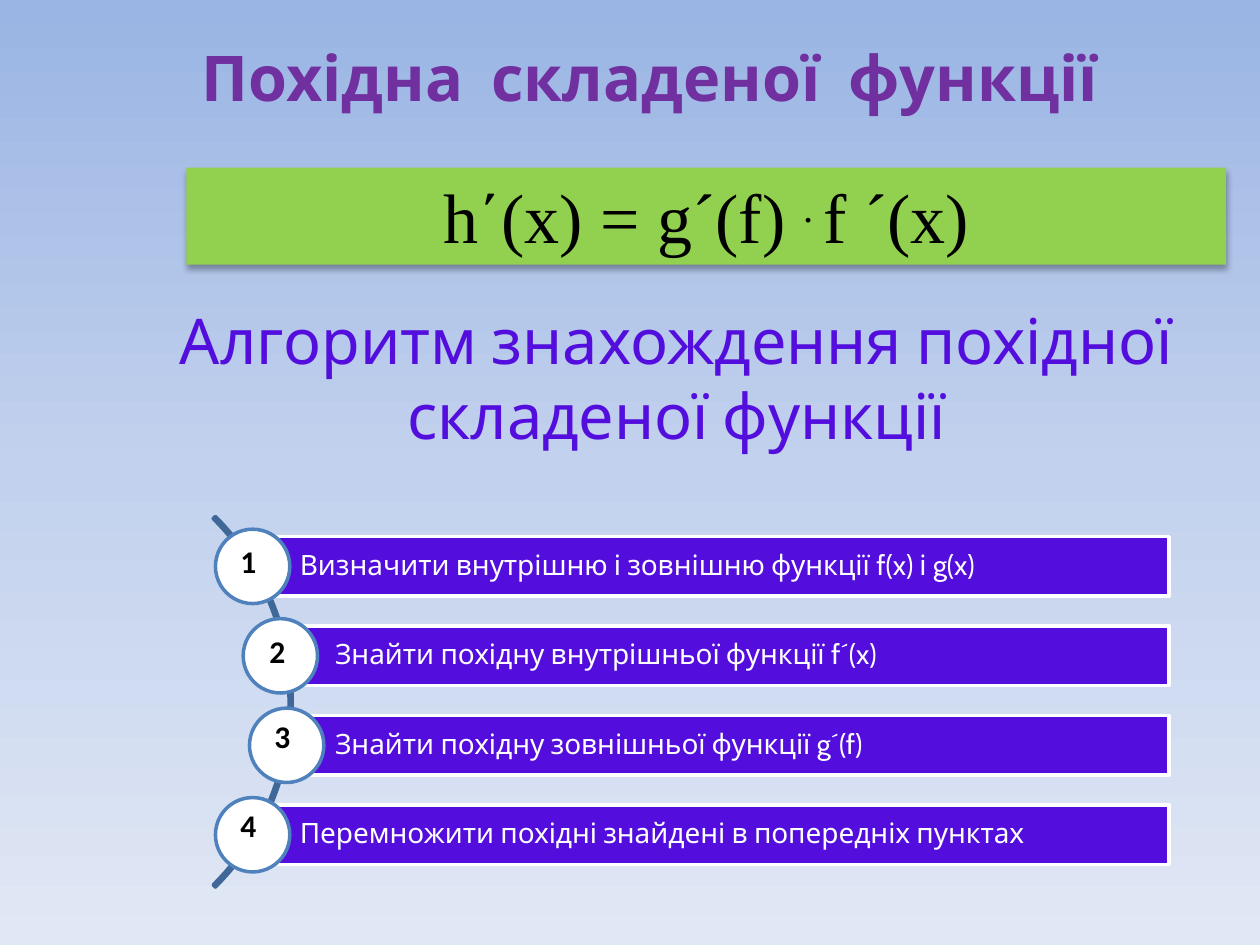
from copy import deepcopy
from lxml.etree import SubElement
from pptx import Presentation
from pptx.dml.color import RGBColor
from pptx.enum.shapes import MSO_SHAPE
from pptx.enum.text import MSO_ANCHOR, MSO_AUTO_SIZE, PP_ALIGN
from pptx.oxml.ns import qn
from pptx.util import Inches, Pt


def color(code):
    return RGBColor.from_string(code)


class Board:
    font = "Cabin"
    violet = "530EDE"
    white = "FFFFFF"
    black = "000000"

    def __init__(self, slide):
        self.slide = slide

    def backdrop(self, codes):
        fill = self.slide.background.fill
        fill.gradient()
        fill.gradient_angle = 270
        stops = self.slide.element.find(".//" + qn("a:gsLst"))
        stops.insert(1, deepcopy(stops[0]))
        for i, (stop, code) in enumerate(zip(fill.gradient_stops, codes)):
            stop.color.rgb = color(code)
            stop.position = i / (len(codes) - 1)

    def style(self, par, size, code, font=font, bold=False):
        par.font.size = Pt(size)
        par.font.name = font
        par.font.bold = bold
        par.font.color.rgb = color(code)

    def shape(self, kind, box, fill=None, line=None):
        item = self.slide.shapes.add_shape(kind, *map(Inches, box))
        item.shadow.inherit = False
        if fill:
            item.fill.solid()
            item.fill.fore_color.rgb = color(fill)
        else:
            item.fill.background()
        if line:
            item.line.color.rgb = color(line)
            item.line.width = Pt(2)
        else:
            item.line.fill.background()
        return item

    def text(self, box, words, size, code, bold=False):
        frame = self.slide.shapes.add_textbox(*map(Inches, box)).text_frame
        frame.word_wrap = True
        frame.auto_size = MSO_AUTO_SIZE.SHAPE_TO_FIT_TEXT
        par = frame.paragraphs[0]
        par.text = words
        par.alignment = PP_ALIGN.CENTER
        self.style(par, size, code, bold=bold)

    def formula(self, box, parts):
        item = self.shape(MSO_SHAPE.RECTANGLE, box, "92D050")
        glow = SubElement(
            item.element.spPr.find(qn("a:effectLst")), qn("a:outerShdw"),
            blurRad=str(Pt(3.5)), dist=str(Pt(2.2)), dir="5400000", rotWithShape="0")
        tint = SubElement(glow, qn("a:srgbClr"), val=self.black)
        SubElement(tint, qn("a:alpha"), val="32000")
        frame = item.text_frame
        frame.vertical_anchor = MSO_ANCHOR.TOP
        par = frame.paragraphs[0]
        par.alignment = PP_ALIGN.CENTER
        for words, base in parts:
            run = par.add_run()
            run.text = words
            if base:
                run.font._element.set("baseline", str(base * 1000))
        self.style(par, 40, self.black, "Times New Roman")

    def arc(self, box):
        item = self.shape(MSO_SHAPE.BLOCK_ARC, box, line="3F6797")
        for i, value in enumerate((189, 27, 0.006)):
            item.adjustments[i] = value

    def bar(self, left, top, words):
        box = (left, top, 9.28 - left, 0.47)
        frame = self.shape(MSO_SHAPE.RECTANGLE, box, self.violet, self.white).text_frame
        frame.word_wrap = True
        frame.vertical_anchor = MSO_ANCHOR.MIDDLE
        frame.margin_left = Inches(0.38)
        frame.margin_right = frame.margin_top = frame.margin_bottom = Inches(0.04)
        par = frame.paragraphs[0]
        par.text = words
        par.alignment = PP_ALIGN.LEFT
        par.line_spacing = 0.9
        self.style(par, 16, self.white)

    def disc(self, left, top):
        self.shape(MSO_SHAPE.OVAL, (left, top, 0.59, 0.59), self.white, "4F81BD")

    def label(self, left, top, words):
        box = map(Inches, (left, top, 0.38, 0.49))
        frame = self.slide.shapes.add_textbox(*box).text_frame
        frame.word_wrap = False
        par = frame.paragraphs[0]
        par.text = words
        self.style(par, 18, self.black, "Calibri", True)


def main():
    deck = Presentation()
    deck.slide_width, deck.slide_height = Inches(10), Inches(7.5)
    board = Board(deck.slides.add_slide(deck.slide_layouts[6]))
    board.backdrop(("9AB5E4", "C2D1ED", "E1E8F5"))
    board.text((0.55, 0.26, 9.22, 0.71), "Похідна  складеної  функції", 36, "7030A0", True)
    board.formula((1.48, 1.33, 8.25, 0.77),
                  (("h΄(x) = g´(f) ", 0), (". ", 30), ("f ´(x)", 0)))
    board.text((1.33, 2.34, 8.08, 1.3),
               "Алгоритм знахождення похідної складеної функції", 36, board.violet)
    board.arc((-1.84, 3.49, 4.16, 4.16))
    steps = (
        ("Визначити внутрішню і зовнішню функції f(x) і g(x)", 2, 1.71, 1.81, 4.25),
        ("Знайти похідну внутрішньої функції f´(x)", 2.28, 1.93, 2.04, 4.97),
        ("Знайти похідну зовнішньої функції g´(f)", 2.28, 1.98, 2.08, 5.64),
        ("Перемножити похідні знайдені в попередніх пунктах", 2, 1.71, 1.81, 6.35),
    )
    for i, (words, left, disc, mark, top) in enumerate(steps):
        row = 4.26 + 0.71 * i
        board.bar(left, row, words)
        board.disc(disc, row - 0.06)
        board.label(mark, top, str(i + 1))
    deck.save("out.pptx")


if __name__ == "__main__":
    main()
